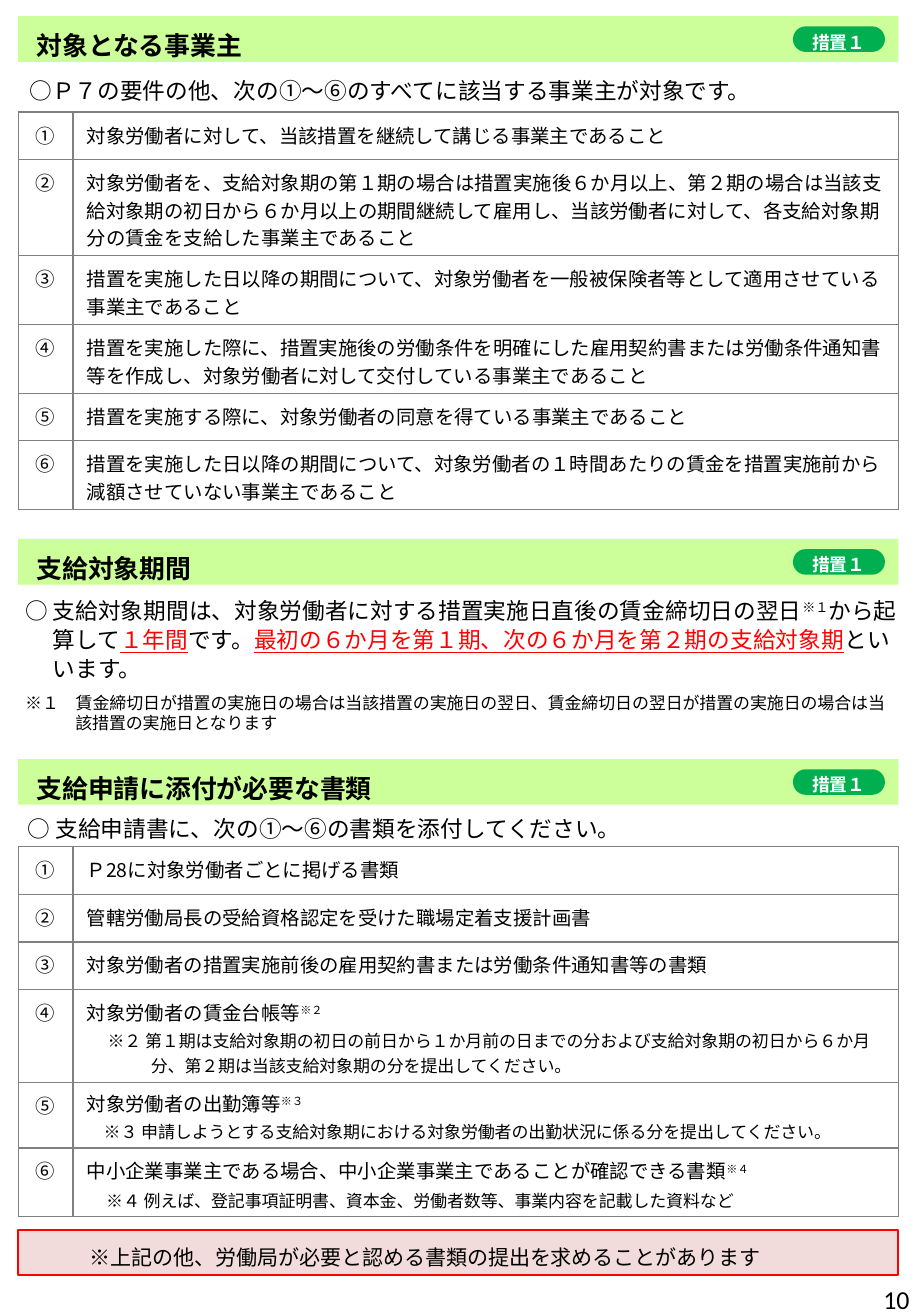
from pptx import Presentation
from pptx.dml.color import RGBColor
from pptx.enum.shapes import MSO_SHAPE
from pptx.enum.text import MSO_ANCHOR, PP_ALIGN
from pptx.oxml import parse_xml
from pptx.oxml.ns import nsdecls, qn
from pptx.util import Pt

JAPANESE_FONT = "Noto Sans CJK JP"
LEFT, WIDTH, NUMBER_WIDTH = 11.3, 544.3, 33.9


def rgb(value):
    return RGBColor.from_string(value)


def write(paragraph, content, size, line=None, left=0, first=0, color="000000",
          bold=False, align=PP_ALIGN.LEFT, name=JAPANESE_FONT):
    """Fill a paragraph; content holds (text, style) pairs, style "", "super" or "red"."""
    paragraph.alignment = align
    if line:
        paragraph.line_spacing = Pt(line)
    font = paragraph.font
    font.name, font.size, font.bold = name, Pt(size), bold
    font.color.rgb = rgb(color)
    properties = paragraph._p.get_or_add_pPr()
    properties.set("marL", str(Pt(left)))
    properties.set("indent", str(Pt(first)))
    east_asian = parse_xml(f'<a:ea {nsdecls("a")} typeface="{name}"/>')
    properties.find(qn("a:defRPr")).find(qn("a:latin")).addnext(east_asian)
    for text, style in content:
        run = paragraph.add_run()
        run.text = text
        if style == "super":
            run._r.get_or_add_rPr().set("baseline", "30000")
        elif style == "red":
            run.font.color.rgb = rgb("FF0000")
            run.font.underline = True


presentation = Presentation()
presentation.slide_width, presentation.slide_height = Pt(567), Pt(813.62)
slide = presentation.slides.add_slide(presentation.slide_layouts[6])

# Notice panel
panel = slide.shapes.add_shape(
    MSO_SHAPE.RECTANGLE, Pt(LEFT), Pt(760.3), Pt(WIDTH), Pt(28.1))
panel.shadow.inherit = False
panel.fill.solid()
panel.fill.fore_color.rgb = rgb("F2DCDB")
panel.line.color.rgb = rgb("FF0000")
panel.line.width = Pt(1.25)

# Section headings, each with its badge
for top, heading in [(10, "対象となる事業主"), (333.2, "支給対象期間"),
                     (469.3, "支給申請に添付が必要な書類")]:
    band = slide.shapes.add_shape(
        MSO_SHAPE.RECTANGLE, Pt(LEFT), Pt(top), Pt(WIDTH), Pt(28.3))
    badge = slide.shapes.add_shape(
        MSO_SHAPE.ROUNDED_RECTANGLE, Pt(490.3), Pt(top + 6.3), Pt(56.9), Pt(15.8))
    badge.adjustments[0] = 0.5
    for shape, fill, insets in [(band, "CCFF99", (11.3, 4.3, 5.7)),
                                (badge, "00B050", (7.9, 3.6, 7.9))]:
        shape.shadow.inherit = False
        shape.fill.solid()
        shape.fill.fore_color.rgb = rgb(fill)
        shape.line.fill.background()
        frame = shape.text_frame
        frame.margin_left, frame.margin_top, frame.margin_right = map(Pt, insets)
        frame.margin_bottom = 0
        frame.vertical_anchor = MSO_ANCHOR.MIDDLE
    write(band.text_frame.paragraphs[0], [(heading, "")], 16, line=23, bold=True)
    write(badge.text_frame.paragraphs[0], [("措置１", "")], 11, color="FFFFFF",
          bold=True, align=PP_ALIGN.CENTER)

# Free text: box, then paragraphs as (content, space before, format)
period = [("○ 支給対象期間は、対象労働者に対する措置実施日直後の賃金締切日の翌日", ""),
          ("※１", "super"), ("から起算して", ""), ("１年間", "red"), ("です。", ""),
          ("最初の６か月を第１期、次の６か月を第２期の支給対象期", "red"),
          ("といいます。", "")]
period_note = [("※１　賃金締切日が措置の実施日の場合は当該措置の実施日の翌日、"
                "賃金締切日の翌日が措置の実施日の場合は当 該措置の実施日となります", "")]
text_boxes = [
    ((11.2, 43.9, 456.5, 19.4), [
        ([("○Ｐ７の要件の他、次の①～⑥のすべてに該当する事業主が対象です。", "")], 0,
         dict(size=14))]),
    ((8.5, 364.3, 554.4, 130.3), [
        (period, 6, dict(size=14, line=18, left=17, first=-17)),
        (period_note, 6, dict(size=10.5, left=31, first=-31))]),
    ((10.1, 499, 545.8, 26.6), [
        ([("○ 支給申請書に、次の①～⑥の書類を添付してください。", "")], 0,
         dict(size=14, line=18))]),
    ((48.4, 766.5, 510, 23), [
        ([("※上記の他、労働局が必要と認める書類の提出を求めることがあります", "")], 0,
         dict(size=13, line=15, left=3.6, first=-3.6))]),
    ((527.6, 785.5, 53.3, 35.3), [
        ([("10", "")], 0, dict(size=16, name="Calibri", align=PP_ALIGN.CENTER))]),
]
for box, paragraphs in text_boxes:
    frame = slide.shapes.add_textbox(*map(Pt, box)).text_frame
    frame.word_wrap = True
    for index, (content, before, style) in enumerate(paragraphs):
        paragraph = frame.add_paragraph() if index else frame.paragraphs[0]
        write(paragraph, content, **style)
        paragraph.space_before = Pt(before)
frame.vertical_anchor = MSO_ANCHOR.MIDDLE

# Tables: each row is its height, line spacing, main text, then any note
requirements = [
    (29.3, 17, [("対象労働者に対して、当該措置を継続して講じる事業主であること", "")]),
    (59.5, 17, [("対象労働者を、支給対象期の第１期の場合は措置実施後６か月以上、"
                 "第２期の場合は当該支給対象期の初日から６か月以上の期間継続して雇用し、"
                 "当該労働者に対して、各支給対象期分の賃金を支給した事業主であること", "")]),
    (42.5, 17, [("措置を実施した日以降の期間について、"
                 "対象労働者を一般被保険者等として適用させている事業主であること", "")]),
    (42.5, 17, [("措置を実施した際に、措置実施後の労働条件を明確にした雇用契約書または"
                 "労働条件通知書等を作成し、対象労働者に対して交付している事業主であること", "")]),
    (29.3, 17, [("措置を実施する際に、対象労働者の同意を得ている事業主であること", "")]),
    (42.5, 17, [("措置を実施した日以降の期間について、対象労働者の１時間あたりの賃金を"
                 "措置実施前から減額させていない事業主であること", "")]),
]
documents = [
    (29.4, 17, [("Ｐ28に対象労働者ごとに掲げる書類", "")]),
    (29.4, 17, [("管轄労働局長の受給資格認定を受けた職場定着支援計画書", "")]),
    (29.4, 17, [("対象労働者の措置実施前後の雇用契約書または労働条件通知書等の書類", "")]),
    (57.5, 17, [("対象労働者の賃金台帳等", ""), ("※２", "super")],
     "※２ 第１期は支給対象期の初日の前日から１か月前の日までの分および"
     "支給対象期の初日から６か月分、第２期は当該支給対象期の分を提出してください。",
     dict(line=16, left=39.6, first=-26.7)),
    (40.5, 16, [("対象労働者の出勤簿等", ""), ("※３", "super")],
     "※３ 申請しようとする支給対象期における対象労働者の出勤状況に係る分を提出してください。",
     dict(line=16, left=10.5)),
    (42.5, 17, [("中小企業事業主である場合、中小企業事業主であることが確認できる書類", ""),
                ("※４", "super")],
     "※４ 例えば、登記事項証明書、資本金、労働者数等、事業内容を記載した資料など",
     dict(line=17, left=12)),
]
for top, rows in [(69.3, requirements), (523.5, documents)]:
    height = sum(row[0] for row in rows)
    table = slide.shapes.add_table(
        len(rows), 2, Pt(LEFT), Pt(top), Pt(WIDTH), Pt(height)).table
    table.first_row = table.horz_banding = False
    table.columns[0].width = Pt(NUMBER_WIDTH)
    table.columns[1].width = Pt(WIDTH - NUMBER_WIDTH)
    for index, (row_height, line, content, *note) in enumerate(rows):
        table.rows[index].height = Pt(row_height)
        number_cell, text_cell = table.rows[index].cells
        for cell in (number_cell, text_cell):
            cell.margin_left = cell.margin_right = Pt(8.5)
            cell.margin_top, cell.margin_bottom = Pt(5.67), Pt(2.83)
            for side in ("lnL", "lnR", "lnT", "lnB"):
                cell._tc.get_or_add_tcPr().append(parse_xml(
                    f'<a:{side} {nsdecls("a")} w="12700"><a:solidFill>'
                    f'<a:srgbClr val="808080"/></a:solidFill></a:{side}>'))
            cell.fill.background()
        write(number_cell.text_frame.paragraphs[0], [("①②③④⑤⑥"[index], "")], 12,
              line=17, align=PP_ALIGN.CENTER)
        write(text_cell.text_frame.paragraphs[0], content, 12, line=line)
        if note:
            note_text, note_style = note
            write(text_cell.text_frame.add_paragraph(), [(note_text, "")], 10.5,
                  **note_style)

presentation.save("out.pptx")
